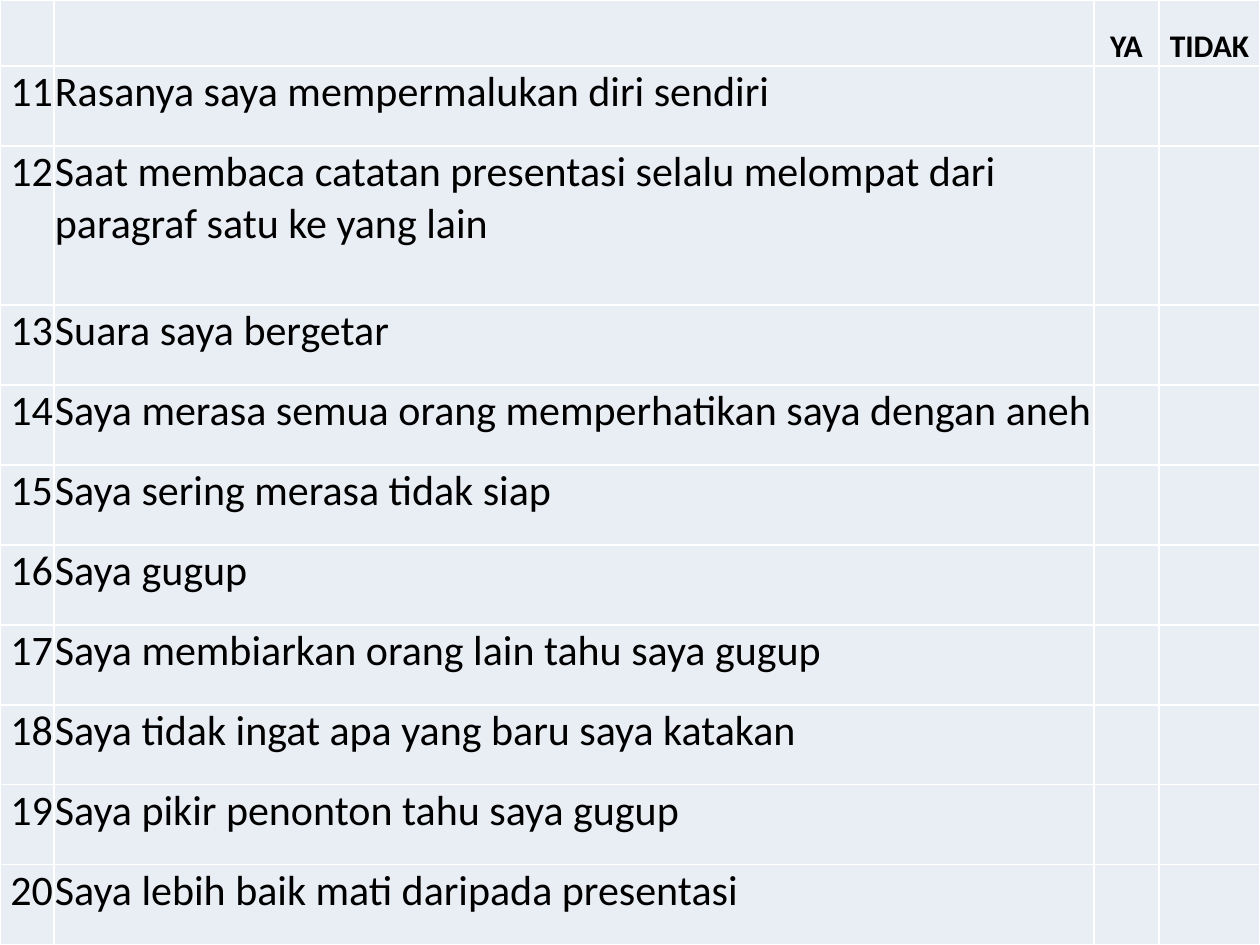
from typing import NamedTuple

from lxml.etree import SubElement
from pptx import Presentation
from pptx.dml.color import RGBColor
from pptx.enum.text import MSO_ANCHOR, PP_ALIGN
from pptx.oxml.ns import qn
from pptx.util import Pt

SCALE = 914400 / 126  # EMU per px
COLORS = {"cell": "E9EDF4", "rule": "FFFFFF", "text": "000000"}
FONT = "Calibri"


class Item(NamedTuple):
    text: str
    high: int = 80


HEAD = 66
COLS = [54, 1040, 65, 101]
FIRST = 11
ITEMS = [
    Item("Rasanya saya mempermalukan diri sendiri"),
    Item("Saat membaca catatan presentasi selalu melompat dari "
         "paragraf satu ke yang lain", 159),
    Item("Suara saya bergetar"),
    Item("Saya merasa semua orang memperhatikan saya dengan aneh"),
    Item("Saya sering merasa tidak siap"),
    Item("Saya gugup"),
    Item("Saya membiarkan orang lain tahu saya gugup"),
    Item("Saya tidak ingat apa yang baru saya katakan"),
    Item("Saya pikir penonton tahu saya gugup"),
    Item("Saya lebih baik mati daripada presentasi"),
]


def px(num: int) -> int:
    return round(num * SCALE)


def style(cell) -> None:
    """Give a cell its white borders and flat fill."""
    props = cell._tc.get_or_add_tcPr()
    for side in ("a:lnL", "a:lnR", "a:lnT", "a:lnB"):
        line = SubElement(props, qn(side), w=str(Pt(1)))
        fill = SubElement(line, qn("a:solidFill"))
        SubElement(fill, qn("a:srgbClr"), val=COLORS["rule"])
    cell.fill.solid()
    cell.fill.fore_color.rgb = RGBColor.from_string(COLORS["cell"])


def write(cell, text: str, *, size: int = 24, bold: bool = False,
          align=PP_ALIGN.LEFT, anchor=MSO_ANCHOR.TOP) -> None:
    cell.margin_left = cell.margin_right = cell.margin_top = px(1)
    cell.margin_bottom = 0
    cell.vertical_anchor = anchor
    para = cell.text_frame.paragraphs[0]
    para.alignment = align
    run = para.add_run()
    run.text = text
    font = run.font
    font.name, font.size, font.bold = FONT, Pt(size), bold
    font.color.rgb = RGBColor.from_string(COLORS["text"])


def main() -> None:
    deck = Presentation()
    deck.slide_width, deck.slide_height = px(1260), px(945)
    slide = deck.slides.add_slide(deck.slide_layouts[6])

    # Table grid
    rows = [HEAD] + [item.high for item in ITEMS]
    table = slide.shapes.add_table(
        len(rows), len(COLS), 0, 0, px(sum(COLS)), px(sum(rows))).table
    table.first_row = table.horz_banding = False
    for col, wide in zip(table.columns, COLS):
        col.width = px(wide)
    for row, high in zip(table.rows, rows):
        row.height = px(high)
    for cell in table.iter_cells():
        style(cell)

    # Answer headings
    for col, text in enumerate(("YA", "TIDAK"), 2):
        write(table.cell(0, col), text, size=18, bold=True,
              align=PP_ALIGN.CENTER, anchor=MSO_ANCHOR.BOTTOM)

    # Numbered statements
    for row, item in enumerate(ITEMS, 1):
        write(table.cell(row, 0), str(FIRST + row - 1), align=PP_ALIGN.RIGHT)
        write(table.cell(row, 1), item.text)

    deck.save("out.pptx")


if __name__ == "__main__":
    main()
